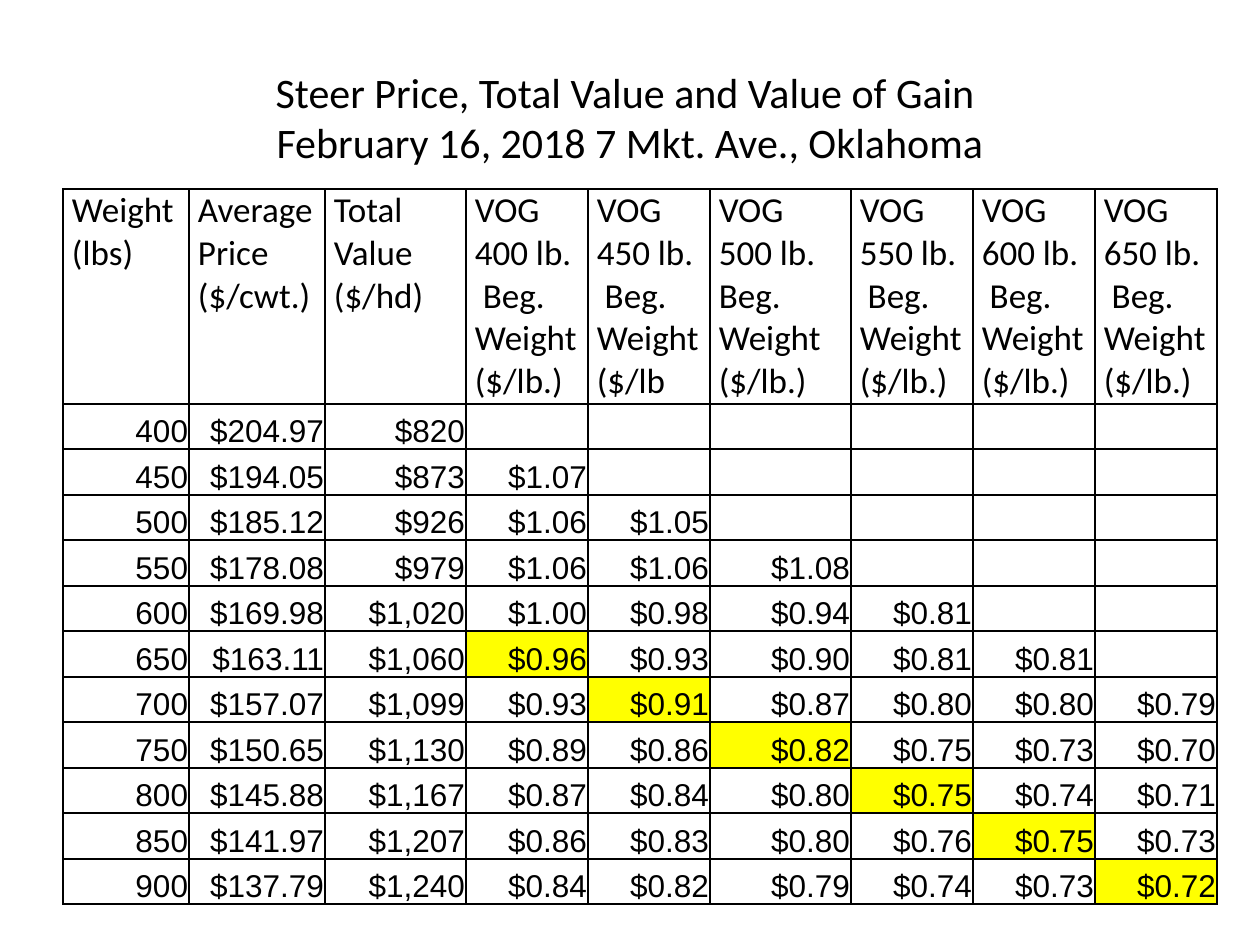
import pptx
import pptx.dml.color
import pptx.enum.text
import pptx.oxml.ns
import pptx.util
from lxml import etree

PX = 914400 // 126
BLACK, WHITE, YELLOW = "000000", "FFFFFF", "FFFF00"
COLUMN_WIDTHS = [126, 136, 141, 122, 122, 141, 122, 122, 122]
HEADER_HEIGHT, BODY_HEIGHT = 215, 500
FIRST_GAIN_COLUMN = 3
FIRST_HIGHLIGHT_ROW = 6
TITLE = "Steer Price, Total Value and Value of Gain \vFebruary 16, 2018 7 Mkt. Ave., Oklahoma"
HEADERS = [
    "Weight (lbs)",
    "Average Price ($/cwt.)",
    "Total Value ($/hd)",
    "VOG\n400 lb.  Beg. Weight\n($/lb.)",
    "VOG\n450 lb.  Beg. Weight\n($/lb",
    "VOG\n500 lb. Beg. Weight\n($/lb.)",
    "VOG\n550 lb.  Beg. Weight\n($/lb.)",
    "VOG\n600 lb.  Beg. Weight\n($/lb.)",
    "VOG\n650 lb.  Beg. Weight\n($/lb.)",
]
PRICES = [
    "400 $204.97 $820",
    "450 $194.05 $873 $1.07",
    "500 $185.12 $926 $1.06 $1.05",
    "550 $178.08 $979 $1.06 $1.06 $1.08",
    "600 $169.98 $1,020 $1.00 $0.98 $0.94 $0.81",
    "650 $163.11 $1,060 $0.96 $0.93 $0.90 $0.81 $0.81",
    "700 $157.07 $1,099 $0.93 $0.91 $0.87 $0.80 $0.80 $0.79",
    "750 $150.65 $1,130 $0.89 $0.86 $0.82 $0.75 $0.73 $0.70",
    "800 $145.88 $1,167 $0.87 $0.84 $0.80 $0.75 $0.74 $0.71",
    "850 $141.97 $1,207 $0.86 $0.83 $0.80 $0.76 $0.75 $0.73",
    "900 $137.79 $1,240 $0.84 $0.82 $0.79 $0.74 $0.73 $0.72",
]


def px(length):
    return pptx.util.Emu(length * PX)


def color(value):
    return pptx.dml.color.RGBColor.from_string(value)


def set_text(text_frame, text, font_name, size, alignment):
    text_frame.text = text
    for paragraph in text_frame.paragraphs:
        paragraph.alignment = alignment
        for run in paragraph.runs:
            run.font.name = font_name
            run.font.size = pptx.util.Pt(size)
            run.font.color.rgb = color(BLACK)


def add_title(slide):
    shape = slide.shapes.add_textbox(px(63), px(38), px(1134), px(157))
    shape.text_frame.word_wrap = True
    shape.text_frame.vertical_anchor = pptx.enum.text.MSO_ANCHOR.MIDDLE
    set_text(shape.text_frame, TITLE, "Calibri", 24, pptx.enum.text.PP_ALIGN.CENTER)


def add_borders(cell):
    properties = cell._tc.get_or_add_tcPr()
    qualified = pptx.oxml.ns.qn
    for side in ("a:lnL", "a:lnR", "a:lnT", "a:lnB"):
        line = etree.SubElement(properties, qualified(side), w=str(pptx.util.Pt(1)))
        fill = etree.SubElement(line, qualified("a:solidFill"))
        etree.SubElement(fill, qualified("a:srgbClr"), val=BLACK)


def style_cell(cell, fill, side_margin, top_margin, anchor):
    add_borders(cell)
    cell.fill.solid()
    cell.fill.fore_color.rgb = color(fill)
    cell.margin_left = cell.margin_right = px(side_margin)
    cell.margin_top = px(top_margin)
    cell.margin_bottom = 0
    cell.vertical_anchor = anchor


def fill_header(table):
    for column, header in enumerate(HEADERS):
        cell = table.cell(0, column)
        style_cell(cell, WHITE, 9, 0, pptx.enum.text.MSO_ANCHOR.TOP)
        set_text(cell.text_frame, header, "Calibri", 20, pptx.enum.text.PP_ALIGN.LEFT)


def fill_body(table):
    for row, prices in enumerate(PRICES, 1):
        values = prices.split()
        for column in range(len(HEADERS)):
            cell = table.cell(row, column)
            highlighted = (
                column >= FIRST_GAIN_COLUMN
                and column - FIRST_GAIN_COLUMN == row - FIRST_HIGHLIGHT_ROW
            )
            fill = YELLOW if highlighted else WHITE
            style_cell(cell, fill, 1, 1, pptx.enum.text.MSO_ANCHOR.BOTTOM)
            if column < len(values):
                set_text(cell.text_frame, values[column], "Arial", 18,
                         pptx.enum.text.PP_ALIGN.RIGHT)


def add_price_table(slide):
    row_count = len(PRICES)
    table = slide.shapes.add_table(
        row_count + 1, len(HEADERS), px(63), px(189),
        px(sum(COLUMN_WIDTHS)), px(HEADER_HEIGHT + BODY_HEIGHT)).table
    table.first_row = False
    table.horz_banding = False
    for column, width in zip(table.columns, COLUMN_WIDTHS):
        column.width = px(width)
    edges = [round(BODY_HEIGHT * row / row_count) for row in range(row_count + 1)]
    table.rows[0].height = px(HEADER_HEIGHT)
    for row in range(1, row_count + 1):
        table.rows[row].height = px(edges[row] - edges[row - 1])
    fill_header(table)
    fill_body(table)


def main():
    presentation = pptx.Presentation()
    presentation.slide_width = px(1260)
    presentation.slide_height = px(945)
    slide = presentation.slides.add_slide(presentation.slide_layouts[6])
    add_title(slide)
    add_price_table(slide)
    presentation.save("out.pptx")


if __name__ == "__main__":
    main()
